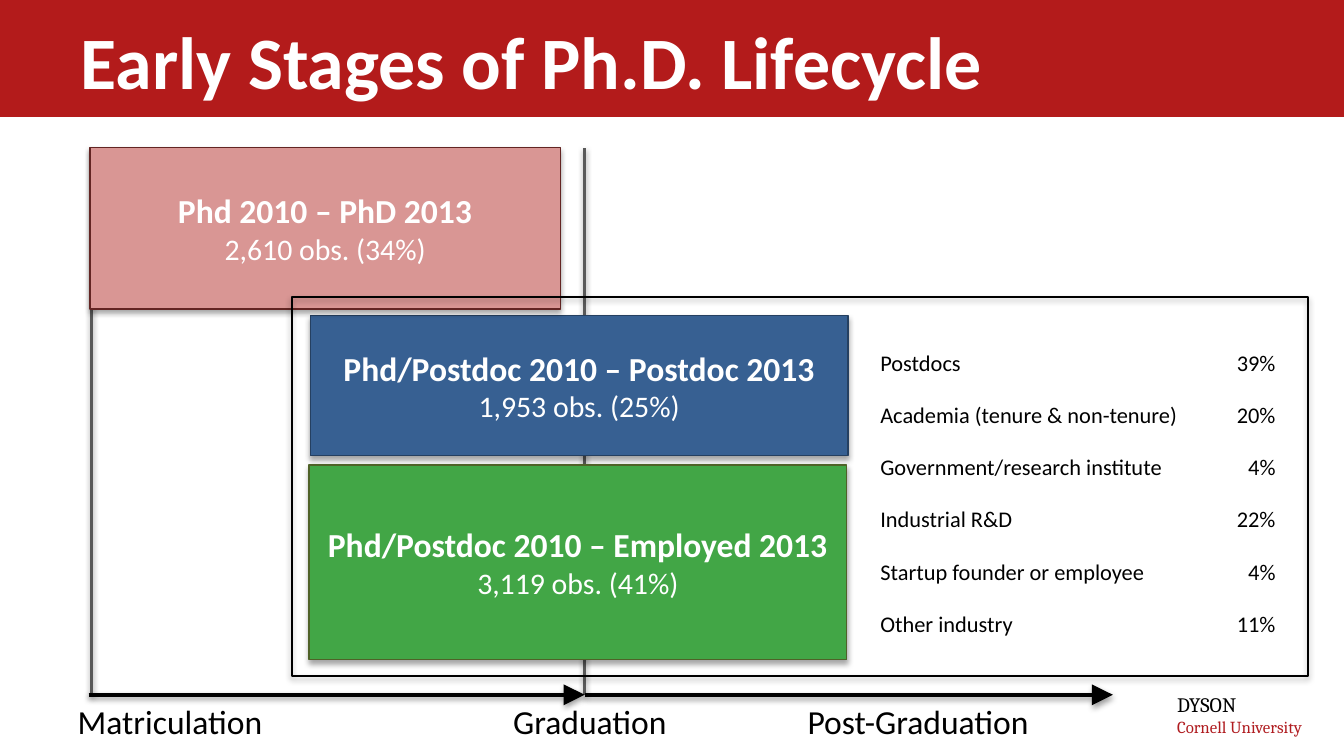
from lxml import etree
from pptx import Presentation
from pptx.dml.color import RGBColor
from pptx.enum import shapes, text
from pptx.oxml import ns
from pptx.util import Inches, Pt

COLORS = {
    "banner": "B31B1B", "white": "FFFFFF", "black": "000000",
    "university": "B01C20", "milestone": "595959",
    "student": "D99694", "student_edge": "632523",
    "postdoc": "376092", "postdoc_edge": "254061",
    "employed": "42A646", "employed_edge": "4F6228",
}
OUTCOMES = [
    ("Postdocs", "39%"),
    ("Academia (tenure & non-tenure)", "20%"),
    ("Government/research institute", "4%"),
    ("Industrial R&D", "22%"),
    ("Startup founder or employee", "4%"),
    ("Other industry", "11%"),
]
AXIS_Y = 5.17
GRADUATION_X = 4.35


def rgb(name):
    return RGBColor.from_string(COLORS[name])


def format_text(paragraph, size, color="black", font="Calibri", bold=False):
    for run in paragraph.runs:
        run.font.size = Pt(size)
        run.font.name = font
        run.font.bold = bold
        run.font.color.rgb = rgb(color)


def add_shadow(element, distance, opacity):
    effects = etree.SubElement(element.spPr, ns.qn("a:effectLst"))
    shadow = etree.SubElement(
        effects, ns.qn("a:outerShdw"), blurRad=str(Pt(3.1)),
        dist=str(Pt(distance)), dir="5400000", rotWithShape="0")
    shade = etree.SubElement(shadow, ns.qn("a:srgbClr"), val=COLORS["black"])
    etree.SubElement(shade, ns.qn("a:alpha"), val=str(opacity * 1000))


def add_rectangle(slide, box, fill=None, edge=None, width=0.75):
    rectangle = slide.shapes.add_shape(
        shapes.MSO_SHAPE.RECTANGLE, *map(Inches, box))
    if fill:
        rectangle.fill.solid()
        rectangle.fill.fore_color.rgb = rgb(fill)
    else:
        rectangle.fill.background()
    if edge:
        rectangle.line.color.rgb = rgb(edge)
        rectangle.line.width = Pt(width)
        add_shadow(rectangle._element, 1.8, 35)
    else:
        rectangle.line.fill.background()
        rectangle.shadow.inherit = False
    return rectangle


def add_group_box(slide, box, group, heading, count, side_inset=0.1):
    frame = add_rectangle(slide, box, group, f"{group}_edge").text_frame
    frame.word_wrap = True
    frame.margin_left = frame.margin_right = Inches(side_inset)
    frame.vertical_anchor = text.MSO_ANCHOR.MIDDLE
    frame.text = f"{heading}\n{count}"
    for paragraph, size, bold in zip(frame.paragraphs, (18, 16), (True, False)):
        paragraph.alignment = text.PP_ALIGN.CENTER
        format_text(paragraph, size, "white", bold=bold)


def add_line(slide, start, end, color, width, arrow=False):
    line = slide.shapes.add_connector(
        shapes.MSO_CONNECTOR.STRAIGHT, *map(Inches, start + end))
    line.line.color.rgb = rgb(color)
    line.line.width = Pt(width)
    if arrow:
        etree.SubElement(line.line._get_or_add_ln(), ns.qn("a:tailEnd"),
                         type="triangle", w="lg", len="lg")
    add_shadow(line._element, 1.6, 38)


def add_label(slide, box, wording):
    label = slide.shapes.add_textbox(*map(Inches, box))
    label.text_frame.word_wrap = False
    label.text_frame.auto_size = text.MSO_AUTO_SIZE.SHAPE_TO_FIT_TEXT
    label.text_frame.text = wording
    format_text(label.text_frame.paragraphs[0], 18)


def add_school(slide):
    school = slide.shapes.add_textbox(*map(Inches, (8.66, 5.1, 1.24, 0.44)))
    school.text_frame.word_wrap = True
    school.text_frame.auto_size = text.MSO_AUTO_SIZE.SHAPE_TO_FIT_TEXT
    school.text_frame.text = "DYSON\nCornell University"
    name, university = school.text_frame.paragraphs
    format_text(name, 11, font="Cambria")
    format_text(university, 9, "university", "Cambria")


def add_title(slide, wording):
    banner = add_rectangle(slide, (0, 0, 10, 0.87), "banner")
    slide.shapes._spTree.insert(2, banner._element)
    title = slide.shapes.title
    title.left, title.top, title.width, title.height = map(
        Inches, (0.5, 0.07, 9, 0.75))
    title.text_frame.text = wording
    title.text_frame.vertical_anchor = text.MSO_ANCHOR.MIDDLE
    title.text_frame.paragraphs[0].alignment = text.PP_ALIGN.LEFT
    format_text(title.text_frame.paragraphs[0], 39.6, "white", bold=True)


def add_outcomes(slide):
    table = slide.shapes.add_table(
        len(OUTCOMES), 2, *map(Inches, (6.54, 2.42, 2.96, 2.33))).table
    table.first_row = table.horz_banding = False
    table.columns[0].width = Inches(2.51)
    table.columns[1].width = Inches(0.45)
    alignments = (text.PP_ALIGN.LEFT, text.PP_ALIGN.RIGHT)
    for row, outcome in zip(table.rows, OUTCOMES):
        for cell, wording, alignment in zip(row.cells, outcome, alignments):
            cell.fill.background()
            cell.margin_left = cell.margin_right = cell.margin_top = Inches(0.01)
            cell.margin_bottom = 0
            cell.vertical_anchor = text.MSO_ANCHOR.BOTTOM
            cell.text_frame.text = wording
            cell.text_frame.paragraphs[0].alignment = alignment
            format_text(cell.text_frame.paragraphs[0], 12)


def main():
    deck = Presentation()
    deck.slide_width = Inches(10)
    deck.slide_height = deck.slide_width * 9 // 16
    slide = deck.slides.add_slide(deck.slide_layouts[5])
    add_title(slide, "Early Stages of Ph.D. Lifecycle")
    add_school(slide)

    for x in (0.68, GRADUATION_X):
        add_line(slide, (x, AXIS_Y), (x, 1.1), "milestone", 1.5)

    add_group_box(slide, (2.31, 2.35, 4, 1.04), "postdoc",
                  "Phd/Postdoc 2010 – Postdoc 2013", "1,953 obs. (25%)")
    add_group_box(slide, (0.67, 1.1, 3.5, 1.2), "student",
                  "Phd 2010 – PhD 2013", "2,610 obs. (34%)")
    add_group_box(slide, (2.3, 3.46, 4, 1.45), "employed",
                  "Phd/Postdoc 2010 – Employed 2013", "3,119 obs. (41%)", 0)
    add_outcomes(slide)

    for left, width, stage in ((0.48, 1.59, "Matriculation"),
                               (3.72, 1.36, "Graduation"),
                               (5.91, 1.89, "Post-Graduation")):
        add_label(slide, (left, AXIS_Y, width, 0.4), stage)
    for start, end in ((0.66, GRADUATION_X), (GRADUATION_X, 8.28)):
        add_line(slide, (start, AXIS_Y), (end, AXIS_Y), "black", 2.25, True)
    add_rectangle(slide, (2.17, 2.21, 7.56, 2.82), edge="black", width=1)

    deck.save("out.pptx")


if __name__ == "__main__":
    main()
